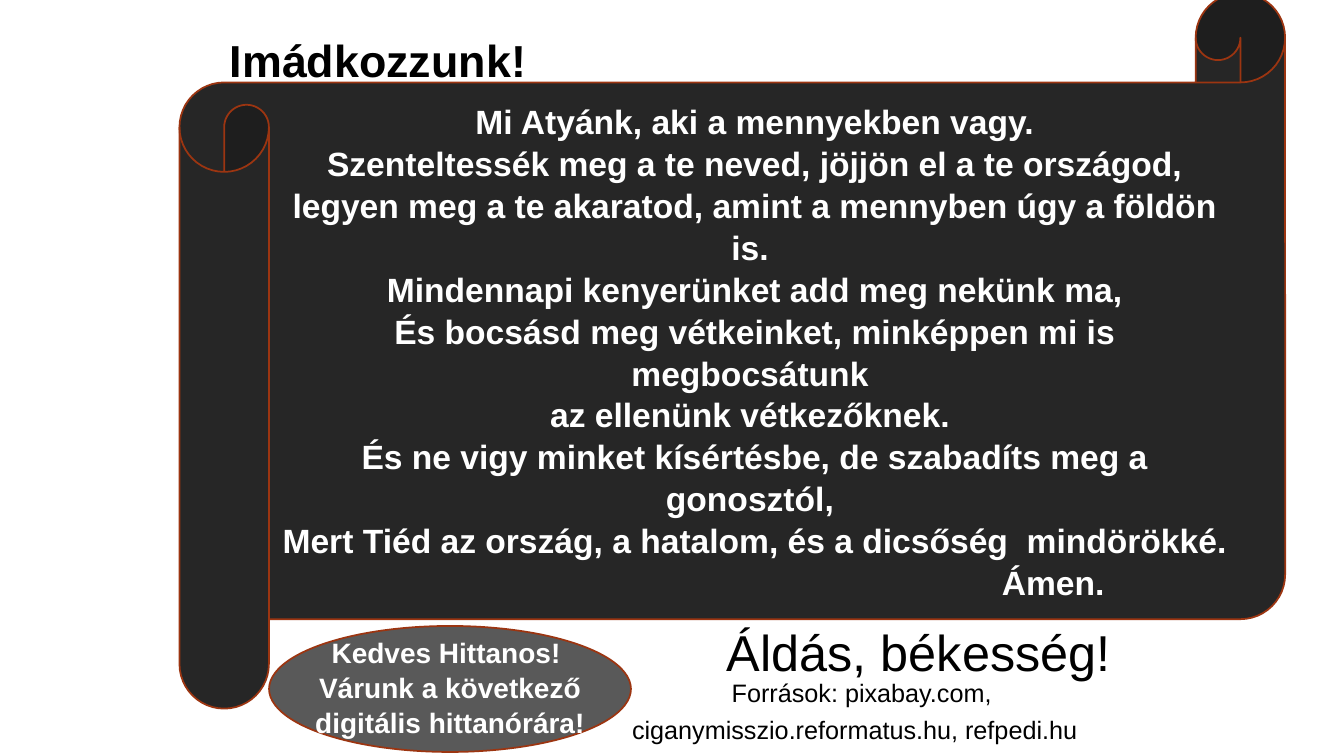
from pptx import Presentation
from pptx.dml.color import RGBColor
from pptx.enum.shapes import MSO_SHAPE
from pptx.enum.text import MSO_ANCHOR, MSO_AUTO_SIZE, PP_ALIGN
from pptx.util import Pt

SCROLL, OVAL = MSO_SHAPE.HORIZONTAL_SCROLL, MSO_SHAPE.OVAL
TOP, MIDDLE, BOTTOM = MSO_ANCHOR.TOP, MSO_ANCHOR.MIDDLE, MSO_ANCHOR.BOTTOM
CENTER, RIGHT = PP_ALIGN.CENTER, PP_ALIGN.RIGHT
FIXED = MSO_AUTO_SIZE.NONE

TITLE = ["Imádkozzunk!"]
PRAYER = [
    "Mi Atyánk, aki a mennyekben vagy.",
    "Szenteltessék meg a te neved, jöjjön el a te országod,",
    "legyen meg a te akaratod, amint a mennyben úgy a földön is. ",
    "Mindennapi kenyerünket add meg nekünk ma,",
    "És bocsásd meg vétkeinket, minképpen mi is megbocsátunk ",
    "az ellenünk vétkezőknek. ",
    "És ne vigy minket kísértésbe, de szabadíts meg a gonosztól, ",
    "Mert Tiéd az ország, a hatalom, és a dicsőség  mindörökké. ",
    "Ámen.",
]
INVITE = ["Kedves Hittanos! ", "Várunk a következő digitális hittanórára!"]
BLESSING = ["Áldás, békesség!"]
SOURCES = ["Források: pixabay.com, ciganymisszio.reformatus.hu, refpedi.hu"]

THEME = {
    "font": "Arial",
    "dark": RGBColor(0x26, 0x26, 0x26),
    "gray": RGBColor(0x59, 0x59, 0x59),
    "rust": RGBColor(0x9C, 0x35, 0x11),
    "black": RGBColor(0, 0, 0),
    "white": RGBColor(255, 255, 255),
    "title": 32,
    "prayer": 24,
    "invite": 20,
    "blessing": 36,
    "sources": 18,
}

BOXES = {
    "title": (128.2, -24.5, 283.7, 90),
    "prayer": (128.2, -5, 789.8, 511.2),
    "oval": (192.2, 447.1, 258.5, 90),
    "invite": (192.2, 449.3, 258.5, 79.9),
    "blessing": (416.3, 438.5, 480.2, 51.1),
    "sources": (439.9, 475.2, 341.3, 61.2),
}


def place(name):
    return [Pt(n) for n in BOXES[name]]


def write(shape, lines, name, color, bold=False, anchor=TOP, gap=1.04):
    frame = shape.text_frame
    frame.text = "\n".join(lines)
    frame.word_wrap = True
    frame.auto_size = FIXED
    frame.vertical_anchor = anchor
    for para in frame.paragraphs:
        para.alignment = CENTER
        para.line_spacing = gap
        for run in para.runs:
            font = run.font
            font.name = THEME["font"]
            font.size = Pt(THEME[name])
            font.bold = bold
            font.color.rgb = THEME[color]
    return frame.paragraphs


def draw(slide, kind, name, fill):
    shape = slide.shapes.add_shape(kind, *place(name))
    shape.shadow.inherit = False
    shape.fill.solid()
    shape.fill.fore_color.rgb = THEME[fill]
    shape.line.color.rgb = THEME["rust"]
    shape.line.width = Pt(1.25)
    return shape


def label(slide, name):
    return slide.shapes.add_textbox(*place(name))


def main():
    deck = Presentation()
    deck.slide_width, deck.slide_height = Pt(960), Pt(540)
    slide = deck.slides.add_slide(deck.slide_layouts[5])

    title = slide.shapes.title
    title.left, title.top, title.width, title.height = place("title")
    write(title, TITLE, "title", "black", True, BOTTOM, 1)

    scroll = draw(slide, SCROLL, "prayer", "dark")
    amen = write(scroll, PRAYER, "prayer", "white", True, MIDDLE)[-1]
    amen.alignment = RIGHT
    amen._p.get_or_add_pPr().set("marR", str(Pt(90)))

    draw(slide, OVAL, "oval", "gray")
    write(label(slide, "invite"), INVITE, "invite", "white", True)
    write(label(slide, "blessing"), BLESSING, "blessing", "black")
    credit = write(label(slide, "sources"), SOURCES, "sources", "black",
                   gap=Pt(26.4))[0]
    credit._p.get_or_add_pPr().set("indent", str(Pt(10)))

    deck.save("out.pptx")


if __name__ == "__main__":
    main()
